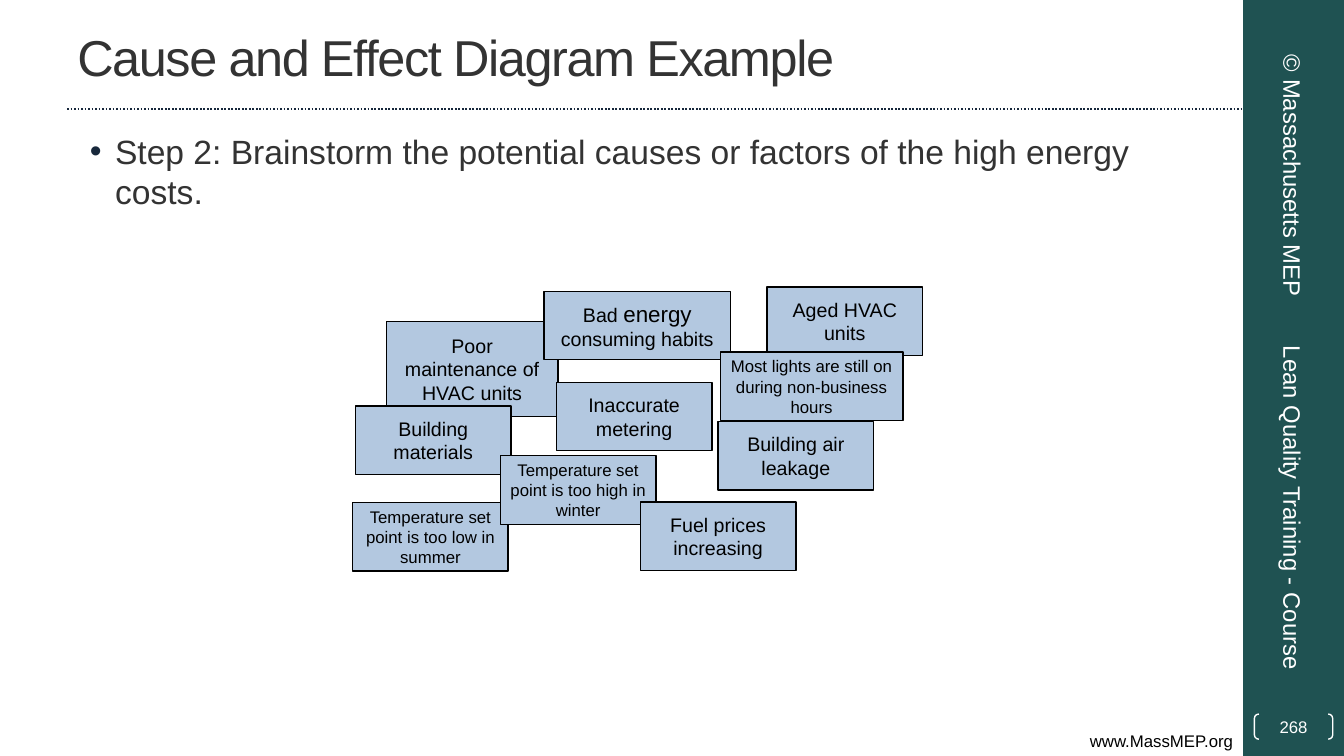
"""Build the brainstorming slide of a cause and effect example."""
from lxml import etree
from pptx import Presentation
from pptx import util as u
from pptx.dml.color import RGBColor
from pptx.enum import dml, shapes, text
from pptx.oxml.ns import qn

Pt = u.Pt
HEX = {"band": "1F5252", "rule": "17273B", "dot": "18283B", "ink": "333333",
       "note": "B3C8E0", "black": "000000", "white": "FFFFFF"}
LEFT, MID, RIGHT = text.PP_ALIGN.LEFT, text.PP_ALIGN.CENTER, text.PP_ALIGN.RIGHT
WIDE, TALL, BAND = 960, 540, 888
NOTE_W, NOTE_H = 111, 49

NOTES = [
    (548, 205, NOTE_W, NOTE_H, 14, ["Aged HVAC units"]),
    (276, 229.5, 122.5, 68, 14, ["Poor maintenance of HVAC units"]),
    (388.5, 208, 133.5, NOTE_H, 14, ["Bad ", "energy", " consuming habits"]),
    (397.5, 273, NOTE_W, NOTE_H, 14, ["Inaccurate metering"]),
    (254, 290, NOTE_W, NOTE_H, 14, ["Building materials"]),
    (252, 359, NOTE_W, NOTE_H, 12, ["Temperature set point is too low in summer"]),
    (357.5, 325.5, NOTE_W, NOTE_H, 12, ["Temperature set point is too high in winter"]),
    (514.5, 251.5, 130.5, NOTE_H, 12,
     ["Most lights are still on during non-business hours"]),
    (513, 301, NOTE_W, NOTE_H, 14, ["Building air leakage"]),
    (457.5, 358.5, NOTE_W, NOTE_H, 14, ["Fuel prices increasing"]),
]


def tint(name):
    """Give the colour of a name."""
    return RGBColor.from_string(HEX[name])


def place(item, x, y, w, h):
    """Move and size an item, in points."""
    item.left, item.top, item.width, item.height = Pt(x), Pt(y), Pt(w), Pt(h)


def write(item, parts, size, ink, side=MID, mid=True):
    """Fill an item with one paragraph and return it."""
    frame = item.text_frame
    frame.word_wrap = True
    frame.auto_size = text.MSO_AUTO_SIZE.NONE
    frame.vertical_anchor = text.MSO_ANCHOR.MIDDLE if mid else text.MSO_ANCHOR.TOP
    para = frame.paragraphs[0]
    for part in parts:
        para.add_run().text = part
    para.alignment = side
    para.space_before = Pt(0)
    font = para.font
    font.name, font.size = "Arial", Pt(size)
    font.color.rgb = tint(ink)
    return para


def block(slide, kind, area, fill=None, line=None):
    """Add a preset shape."""
    item = slide.shapes.add_shape(kind, *map(Pt, area))
    item.shadow.inherit = False
    if fill:
        item.fill.solid()
        item.fill.fore_color.rgb = tint(fill)
    else:
        item.fill.background()
    if line:
        item.line.color.rgb = tint(line)
        item.line.width = Pt(1)
    else:
        item.line.fill.background()
    return item


def label(slide, area, words, size, ink, side, turn=0, mid=True):
    """Add a text box, turned if asked."""
    item = slide.shapes.add_textbox(*map(Pt, area))
    item.rotation = turn
    write(item, [words], size, ink, side, mid)


def rule(slide, x, y, end):
    """Add the dotted rule below the title."""
    line = slide.shapes.add_connector(
        shapes.MSO_CONNECTOR.STRAIGHT, Pt(x), Pt(y), Pt(end), Pt(y))
    line.line.color.rgb = tint("rule")
    line.line.width = Pt(1.25)
    line.line.dash_style = dml.MSO_LINE.ROUND_DOT
    etree.SubElement(line.element.spPr, qn("a:effectLst"))


def head(item, words):
    """Fill the title, with tight letters."""
    place(item, 48, 2, 800, 76)
    write(item, [words], 36, "ink", LEFT)
    for font in item.element.iter(qn("a:defRPr")):
        font.set("spc", "-100")


def points(item, words):
    """Fill the body with one bullet."""
    place(item, 48, 90, 800, 432)
    props = item.text_frame.paragraphs[0]._p.get_or_add_pPr()
    props.set("marL", str(Pt(27)))
    props.set("indent", str(-Pt(18)))
    shade = etree.SubElement(props, qn("a:buClr"))
    etree.SubElement(shade, qn("a:srgbClr"), val=HEX["dot"])
    etree.SubElement(props, qn("a:buFont"), typeface="Arial")
    etree.SubElement(props, qn("a:buChar"), char="•")
    write(item, [words], 24, "ink", LEFT, mid=False)


def number(slide, words):
    """Add the page number in brackets."""
    item = block(slide, shapes.MSO_SHAPE.DOUBLE_BRACKET, (896, 510, 56, 18),
                 line="white")
    item.adjustments[0] = 0.18
    frame = item.text_frame
    frame.margin_left = frame.margin_right = 0
    frame.margin_top = frame.margin_bottom = 0
    write(item, [words], 12, "white")


def note(slide, x, y, w, h, size, parts):
    """Add a cause; a second part stands out in size."""
    item = block(slide, shapes.MSO_SHAPE.RECTANGLE, (x, y, w, h), "note", "black")
    para = write(item, parts, size, "black")
    for run in para.runs[1:2]:
        run.font.size = Pt(16)


def main():
    """Build and save the slide."""
    deck = Presentation()
    deck.slide_width, deck.slide_height = Pt(WIDE), Pt(TALL)
    slide = deck.slides.add_slide(deck.slide_layouts[1])
    block(slide, shapes.MSO_SHAPE.RECTANGLE, (BAND, 0, WIDE - BAND, TALL), "band")
    rule(slide, 48, 78, BAND)
    label(slide, (0, 518.5, BAND, 21.5), "www.MassMEP.org", 12, "black", RIGHT,
          mid=False)
    head(slide.shapes.title, "Cause and Effect Diagram Example")
    points(slide.placeholders[1], "Step 2: Brainstorm the potential causes or "
           "factors of the high energy costs.")
    number(slide, "268")
    label(slide, (809.5, 106.5, 228, 38), "© Massachusetts MEP", 17, "white", MID, 90)
    label(slide, (791.5, 353, 264, 38), "Lean Quality Training - Course", 17, "white",
          LEFT, 90)
    for entry in NOTES:
        note(slide, *entry)
    deck.save("out.pptx")


if __name__ == "__main__":
    main()
